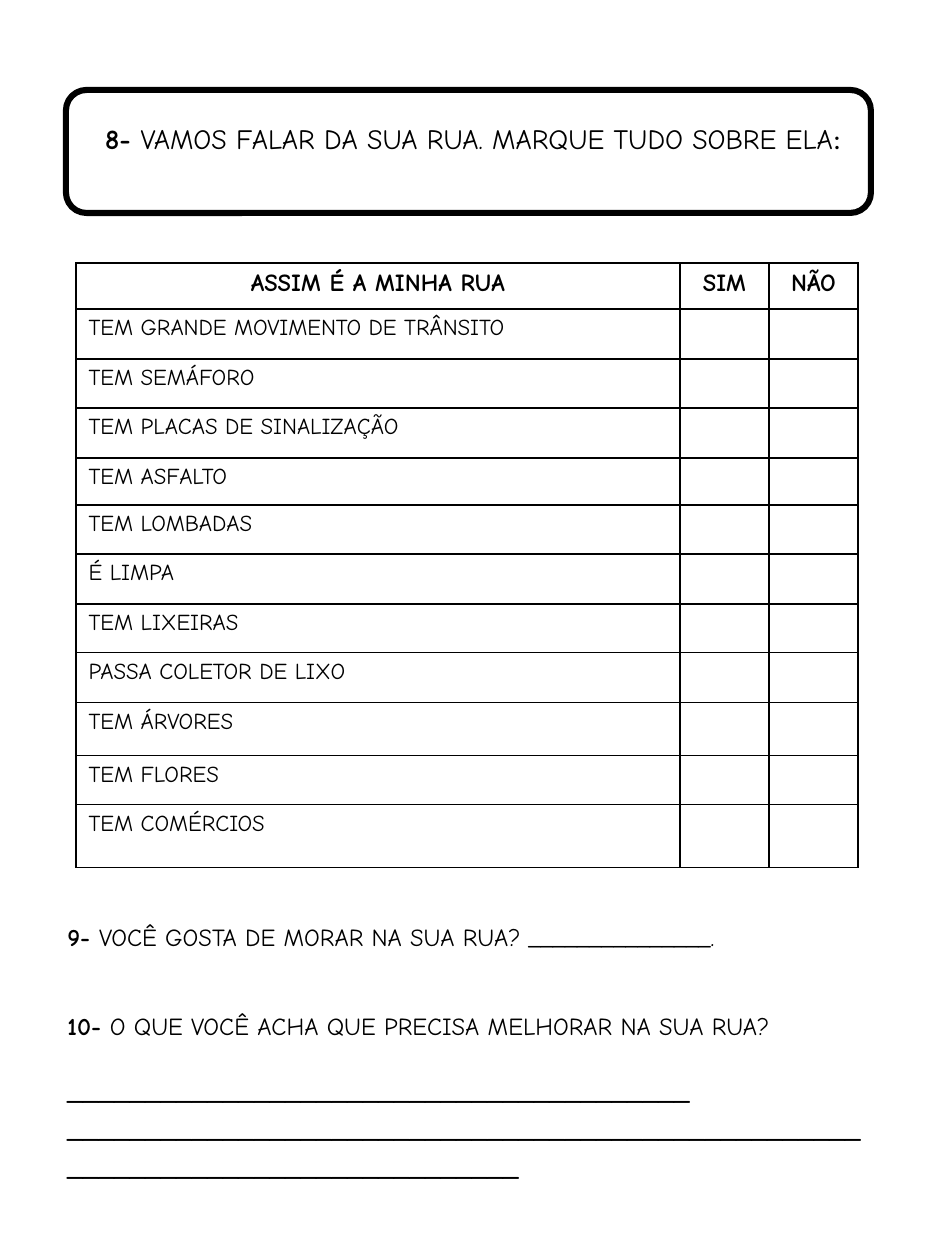
import pptx
import pptx.util
import pptx.dml.color
import pptx.enum.shapes
import pptx.enum.text
import pptx.oxml

PX = 914400 / 126
NS = "http://schemas.openxmlformats.org/drawingml/2006/main"
PP_ALIGN = pptx.enum.text.PP_ALIGN
TOP = pptx.enum.text.MSO_ANCHOR.TOP
NO_FIT = pptx.enum.text.MSO_AUTO_SIZE.NONE


def color(value):
    return pptx.dml.color.RGBColor.from_string(value)


def add_run(p, text, size, bold=False, name="Comic Neue"):
    r = p.add_run()
    r.text = text
    fmt = {"size": pptx.util.Pt(size), "bold": bold, "name": name}
    for key, value in fmt.items():
        setattr(r.font, key, value)
    r.font.color.rgb = color("000000")


prs = pptx.Presentation()
prs.slide_width = round(945 * PX)
prs.slide_height = round(1260 * PX)
s = prs.slides.add_slide(prs.slide_layouts[5])

# Heading
title = s.shapes.title
box = {"left": 86, "top": 115, "width": 774, "height": 81}
for key, value in box.items():
    setattr(title, key, round(value * PX))
tf = title.text_frame
for key, value in {"word_wrap": True, "auto_size": NO_FIT, "vertical_anchor": TOP}.items():
    setattr(tf, key, value)
p = tf.paragraphs[0]
p.alignment = PP_ALIGN.CENTER
add_run(p, "8- ", 16, True)
add_run(p, "VAMOS FALAR DA SUA RUA. MARQUE TUDO SOBRE ELA", 16)
add_run(p, ":", 16, name="Calibri")

# Rounded frame around the heading
sp = s.shapes.add_shape(pptx.enum.shapes.MSO_SHAPE.ROUNDED_RECTANGLE,
                        *[round(v * PX) for v in (66, 90, 805, 123)])
sp.shadow.inherit = False
sp.fill.background()
sp.line.color.rgb = color("000000")
sp.line.width = pptx.util.Pt(3.5)

# Checklist table
header = ["ASSIM É A MINHA RUA", "SIM", "NÃO"]
items = [
    "TEM GRANDE MOVIMENTO DE TRÂNSITO",
    "TEM SEMÁFORO",
    "TEM PLACAS DE SINALIZAÇÃO",
    "TEM ASFALTO",
    "TEM LOMBADAS",
    "É LIMPA",
    "TEM LIXEIRAS",
    "PASSA COLETOR DE LIXO",
    "TEM ÁRVORES",
    "TEM FLORES",
    "TEM COMÉRCIOS",
]
rows = [header] + [[item, "", ""] for item in items]
col_widths = [604, 89, 89]
row_heights = [46, 50, 49, 50, 47, 49, 50, 49, 50, 53, 49, 63]
table = s.shapes.add_table(len(rows), len(header), round(76 * PX), round(263 * PX),
                           round(sum(col_widths) * PX), round(sum(row_heights) * PX)).table
table.first_row = False
table.horz_banding = False
for col, width in zip(table.columns, col_widths):
    col.width = round(width * PX)
for row, height in zip(table.rows, row_heights):
    row.height = round(height * PX)

for i, texts in enumerate(rows):
    for j, text in enumerate(texts):
        cell = table.cell(i, j)
        tcPr = cell._tc.get_or_add_tcPr()
        for side in ("lnL", "lnR", "lnT", "lnB"):
            tcPr.append(pptx.oxml.parse_xml(
                f'<a:{side} xmlns:a="{NS}" w="12700"><a:solidFill>'
                f'<a:srgbClr val="000000"/></a:solidFill></a:{side}>'))
        cell.fill.background()
        p = cell.text_frame.paragraphs[0]
        if text:
            add_run(p, text, 13 if i else 14, i == 0)
        else:
            cell.margin_top = cell.margin_bottom = 0
        if i == 0:
            p.alignment = PP_ALIGN.CENTER

# Open questions with answer lines: space before, then (text, size, bold) runs
questions = [
    (0, [("9- ", 14, True),
         ("VOCÊ GOSTA DE MORAR NA SUA RUA? " + "_" * 15 + ".", 14, False)]),
    (34, [("10- ", 14, True),
          ("O QUE VOCÊ ACHA QUE PRECISA MELHORAR NA SUA RUA?", 14, False)]),
    (17, [("_" * 40, 18, False)]),
    (0, [("_" * 80, 18, False)]),
]
sp = s.shapes.add_textbox(*[round(v * PX) for v in (55, 916, 828, 339)])
tf = sp.text_frame
tf.word_wrap = True
for i, (space, runs) in enumerate(questions):
    p = tf.add_paragraph() if i else tf.paragraphs[0]
    p.space_before = pptx.util.Pt(space)
    for text, size, bold in runs:
        add_run(p, text, size, bold)

prs.save("out.pptx")
